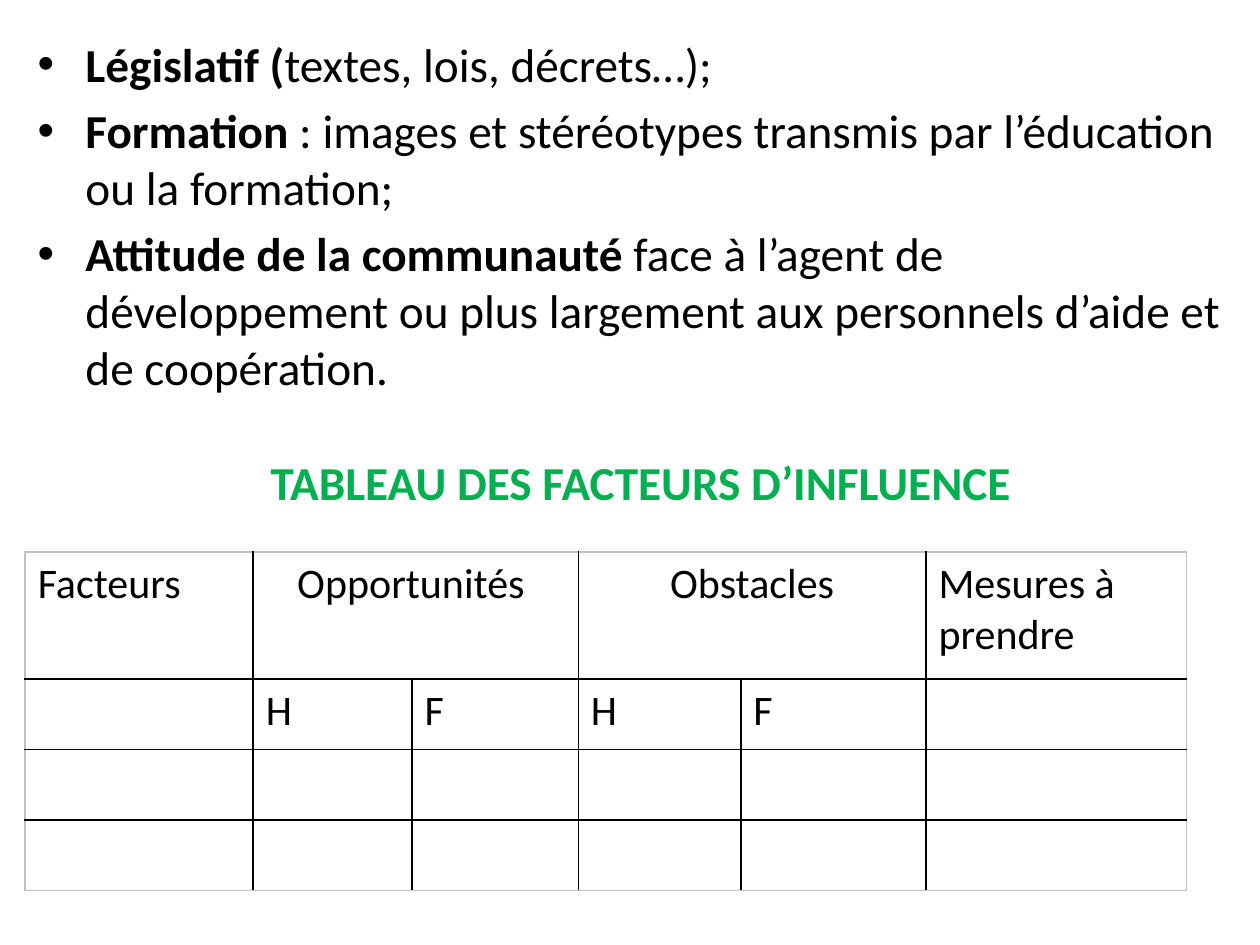
from lxml.etree import SubElement
from pptx import Presentation
from pptx.dml.color import RGBColor
from pptx.enum.text import MSO_ANCHOR, PP_ALIGN
from pptx.oxml.ns import qn
from pptx.util import Inches, Pt

FONT = "Calibri"
BLACK, GREEN, GREY, WHITE = "000000", "00B050", "C0C0C0", "FFFFFF"

FACTORS = [
    ("Législatif (", "textes, lois, décrets…);"),
    ("Formation\u00a0", ": images et stéréotypes transmis par l’éducation ou la formation;"),
    ("Attitude de la communauté ",
     "face à l’agent de développement ou plus largement aux personnels d’aide et de coopération."),
]
COLUMN_WIDTHS = [1.81, 1.26, 1.32, 1.29, 1.47, 2.07]
ROW_HEIGHTS = [1.01, 0.56, 0.56, 0.56]
ROWS = [
    ["Facteurs", "Opportunités ", "", "Obstacles", "", "Mesures à prendre"],
    ["", "H", "F", "H", "F", ""],
    [""] * 6,
    [""] * 6,
]
MERGED_HEADERS = [1, 3]


def color(value):
    return RGBColor.from_string(value)


def style(paragraph, size, value, bold=None):
    font = paragraph.font
    font.name, font.size, font.bold = FONT, Pt(size), bold
    font.color.rgb = color(value)


def place(shape, left, top, width, height):
    shape.left, shape.top = Inches(left), Inches(top)
    shape.width, shape.height = Inches(width), Inches(height)


def add_title(page, text):
    title = page.shapes.title
    place(title, 0.51, 3.51, 9.15, 0.62)
    frame = title.text_frame
    frame.text = text
    frame.vertical_anchor = MSO_ANCHOR.MIDDLE
    paragraph = frame.paragraphs[0]
    paragraph.alignment = PP_ALIGN.CENTER
    style(paragraph, 27, GREEN, True)


def add_bullet(paragraph):
    properties = paragraph._p.get_or_add_pPr()
    properties.set("marL", str(Inches(0.38)))
    properties.set("indent", str(-Inches(0.38)))
    SubElement(properties, qn("a:buFont"), typeface="Arial")
    SubElement(properties, qn("a:buChar"), char="•")


def add_factors(page):
    box = page.shapes.add_textbox(Inches(0.2), Inches(0.23), Inches(9.61), Inches(7.27))
    frame = box.text_frame
    frame.word_wrap = True
    for index, (name, detail) in enumerate(FACTORS):
        paragraph = frame.add_paragraph() if index else frame.paragraphs[0]
        paragraph.space_before = Pt(5.4)
        add_bullet(paragraph)
        style(paragraph, 27, BLACK)
        for text, bold in ((name, True), (detail, False)):
            span = paragraph.add_run()
            span.text = text
            span.font.bold = bold


def set_borders(cell, sides):
    """Draw 1 pt borders; sides maps L, R, T and B to colours."""
    properties = cell._tc.get_or_add_tcPr()
    for index, side in enumerate("LRTB"):
        line = properties.makeelement(qn(f"a:ln{side}"), {"w": str(Pt(1))})
        fill = SubElement(line, qn("a:solidFill"))
        SubElement(fill, qn("a:srgbClr"), val=sides[side])
        properties.insert(index, line)


def add_influence_table(page):
    frame = page.shapes.add_table(
        len(ROWS), len(COLUMN_WIDTHS), Inches(0.2), Inches(4.38),
        Inches(sum(COLUMN_WIDTHS)), Inches(sum(ROW_HEIGHTS)))
    table = frame.table
    table.first_row = table.horz_banding = False
    for column, width in zip(table.columns, COLUMN_WIDTHS):
        column.width = Inches(width)
    for row, height in zip(table.rows, ROW_HEIGHTS):
        row.height = Inches(height)
    for column in MERGED_HEADERS:
        table.cell(0, column).merge(table.cell(0, column + 1))

    last_row, last_column = len(ROWS) - 1, len(COLUMN_WIDTHS) - 1
    for row, texts in enumerate(ROWS):
        for column, text in enumerate(texts):
            cell = table.cell(row, column)
            cell.fill.solid()
            cell.fill.fore_color.rgb = color(WHITE)
            outer = {"L": column == 0, "R": column == last_column,
                     "T": row == 0, "B": row == last_row}
            set_borders(cell, {side: GREY if edge else BLACK for side, edge in outer.items()})
            if text:
                cell.text = text
                style(cell.text_frame.paragraphs[0], 24, BLACK)
    for column in MERGED_HEADERS:
        table.cell(0, column).text_frame.paragraphs[0].alignment = PP_ALIGN.CENTER


def main():
    deck = Presentation()
    deck.slide_width, deck.slide_height = Inches(10), Inches(7.5)
    page = deck.slides.add_slide(deck.slide_layouts.get_by_name("Title Only"))
    add_factors(page)
    add_influence_table(page)
    add_title(page, "TABLEAU DES FACTEURS D’INFLUENCE")
    deck.save("out.pptx")


if __name__ == "__main__":
    main()
